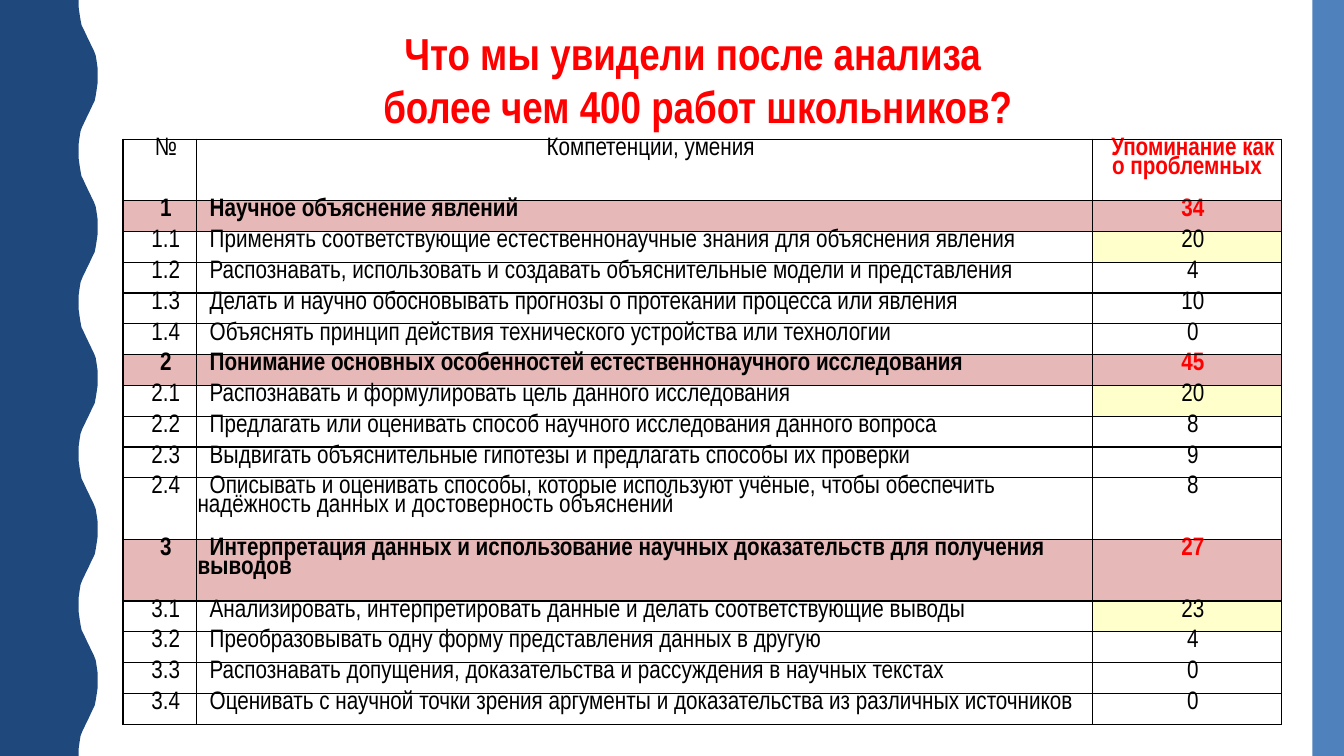
from lxml.etree import SubElement
from pptx import Presentation
from pptx.dml.color import RGBColor
from pptx.enum.shapes import MSO_SHAPE
from pptx.enum.text import MSO_ANCHOR, MSO_AUTO_SIZE, PP_ALIGN
from pptx.oxml.ns import qn
from pptx.util import Pt

NAVY = RGBColor(0x1F, 0x49, 0x7D)
BLUE = RGBColor(0x4F, 0x81, 0xBD)
RED = RGBColor(0xFF, 0x00, 0x00)
BLACK = RGBColor(0x00, 0x00, 0x00)
WHITE = RGBColor(0xFF, 0xFF, 0xFF)
PINK = RGBColor(0xE6, 0xB9, 0xB8)
YELLOW = RGBColor(0xFF, 0xFF, 0xCC)
FONT = "Arial Narrow"

ROWS = [
    ("№", "Компетенции, умения", "Упоминание как о проблемных"),
    ("1", "Научное объяснение явлений", "34"),
    ("1.1", "Применять соответствующие естественнонаучные знания для объяснения явления", "20"),
    ("1.2", "Распознавать, использовать и создавать объяснительные модели и представления", "4"),
    ("1.3", "Делать и научно обосновывать прогнозы о протекании процесса или явления", "10"),
    ("1.4", "Объяснять принцип действия технического устройства или технологии", "0"),
    ("2", "Понимание основных особенностей естественнонаучного исследования", "45"),
    ("2.1", "Распознавать и формулировать цель данного исследования", "20"),
    ("2.2", "Предлагать или оценивать способ научного исследования данного вопроса", "8"),
    ("2.3", "Выдвигать объяснительные гипотезы и предлагать способы их проверки", "9"),
    ("2.4", "Описывать и оценивать способы, которые используют учёные, чтобы обеспечить "
            "надёжность данных и достоверность объяснений", "8"),
    ("3", "Интерпретация данных и использование научных доказательств для получения выводов", "27"),
    ("3.1", "Анализировать, интерпретировать данные и делать соответствующие выводы", "23"),
    ("3.2", "Преобразовывать одну форму представления данных в другую", "4"),
    ("3.3", "Распознавать допущения, доказательства и рассуждения в научных текстах", "0"),
    ("3.4", "Оценивать c научной точки зрения аргументы и доказательства из различных источников", "0"),
]
TALL_ROWS = ("№", "2.4", "3")
ROW_HEIGHT = 22
COL_WIDTHS = (52.6, 640.1, 134.6)
HALF_WAVE = [(56.2, 0), (56.2, 5), (56.9, 10), (57.6, 14.4), (58.3, 18), (59.8, 21), (61.2, 24),
             (62.6, 27), (64.1, 30), (65.5, 33), (67, 36), (68.4, 39.6), (69.1, 44), (69.8, 49)]


def add_run(p, text, size, color, bold):
    r = p.add_run()
    r.text = text
    r.font.name = FONT
    r.font.size = Pt(size)
    r.font.bold = bold
    r.font.color.rgb = color


def add_borders(cell):
    tcPr = cell._tc.get_or_add_tcPr()
    for side in ("a:lnL", "a:lnR", "a:lnT", "a:lnB"):
        ln = SubElement(tcPr, qn(side), w=str(Pt(1)))
        SubElement(SubElement(ln, qn("a:solidFill")), qn("a:srgbClr"), val=str(BLACK))


prs = Presentation()
prs.slide_width, prs.slide_height = Pt(960), Pt(540)
s = prs.slides.add_slide(prs.slide_layouts[5])

edge = []
for period in range(5):
    top = period * 108
    edge += [(Pt(x), Pt(top + y)) for x, y in HALF_WAVE]
    edge += [(Pt(126 - x), Pt(top + 54 + y)) for x, y in HALF_WAVE]
fb = s.shapes.build_freeform(0, 0)
fb.add_line_segments(edge + [(Pt(56.2), Pt(540)), (0, Pt(540))], close=True)
wave = fb.convert_to_shape()
strip = s.shapes.add_shape(MSO_SHAPE.RECTANGLE, Pt(937.5), 0, Pt(22.5), Pt(540))
for sp, color in ((wave, NAVY), (strip, BLUE)):
    sp.shadow.inherit = False
    sp.fill.solid()
    sp.fill.fore_color.rgb = color
    sp.line.fill.background()

height = ROW_HEIGHT * (len(ROWS) + len(TALL_ROWS))
frame = s.shapes.add_table(len(ROWS), 3, Pt(87.84), Pt(99.36), Pt(sum(COL_WIDTHS)), Pt(height))
table = frame.table
table.first_row = table.horz_banding = False
for col, width in zip(table.columns, COL_WIDTHS):
    col.width = Pt(width)

for i, row in enumerate(ROWS):
    number, skill, count = row
    header = i == 0
    section = not header and "." not in number
    table.rows[i].height = Pt(ROW_HEIGHT * (2 if number in TALL_ROWS else 1))
    for j, text in enumerate(row):
        cell = table.cell(i, j)
        add_borders(cell)
        cell.margin_left = cell.margin_right = cell.margin_top = Pt(0.72)
        cell.margin_bottom = 0
        last = j == 2
        top_skill = last and not header and int(count) >= 20
        cell.fill.solid()
        cell.fill.fore_color.rgb = PINK if section else YELLOW if top_skill else WHITE
        p = cell.text_frame.paragraphs[0]
        p.alignment = PP_ALIGN.LEFT if j == 1 and not header else PP_ALIGN.CENTER
        p.line_spacing = 0.8
        pPr = p._p.get_or_add_pPr()
        pPr.set("marL", "0")
        pPr.set("indent", str(Pt(8.64)))
        marked = last and (header or section)
        add_run(p, text, 18, RED if marked else BLACK, section or marked)

title = s.shapes.title
title.left, title.top, title.width, title.height = Pt(208.8), Pt(14.4), Pt(579.6), Pt(85)
tf = title.text_frame
tf.word_wrap = True
tf.auto_size = MSO_AUTO_SIZE.NONE
tf.vertical_anchor = MSO_ANCHOR.TOP
for i, line in enumerate(("Что мы увидели после анализа ", "более чем 400 работ школьников?")):
    p = tf.add_paragraph() if i else tf.paragraphs[0]
    p.alignment = PP_ALIGN.CENTER
    p.space_before = Pt(0)
    add_run(p, line, 32, RED, True)

prs.save("out.pptx")
